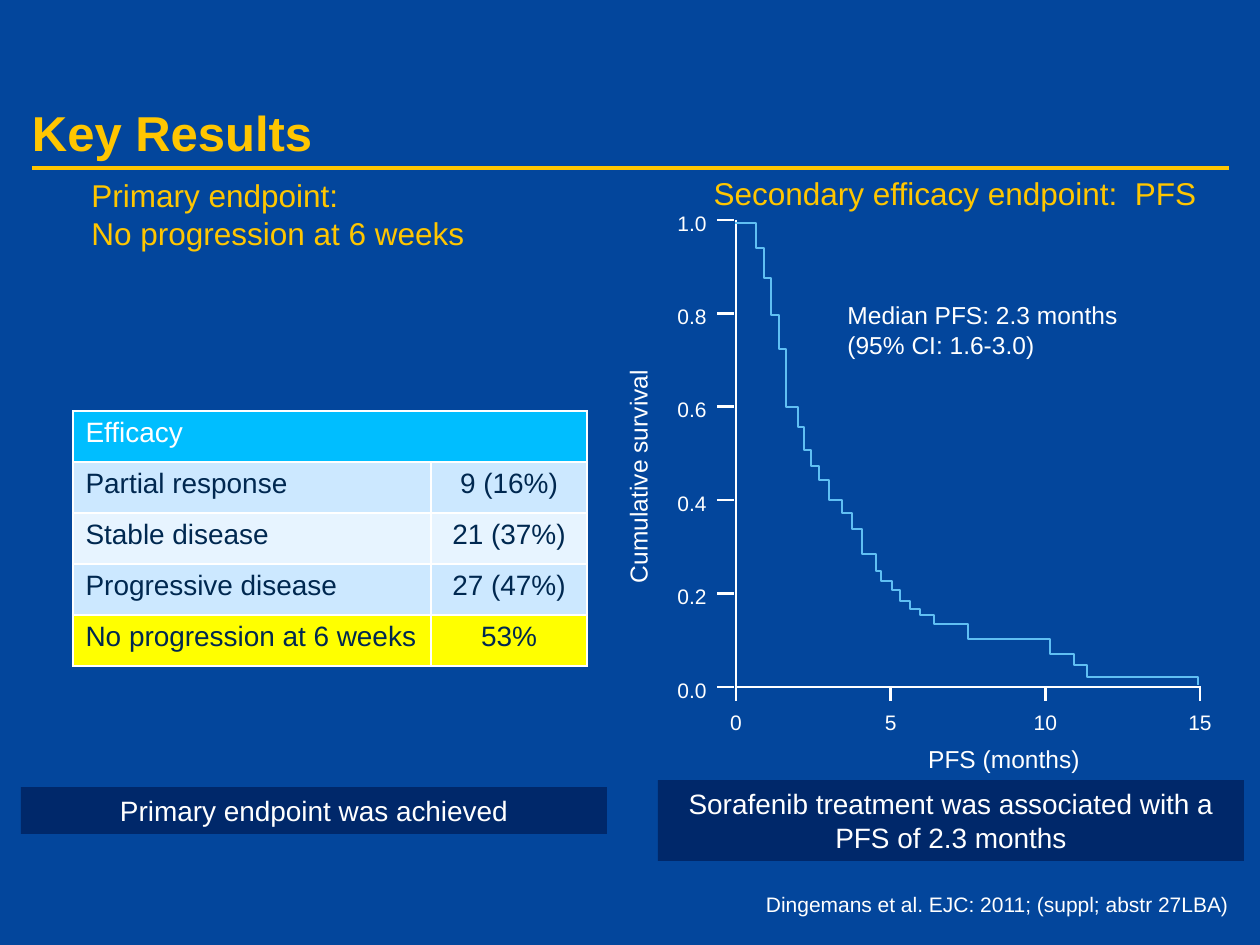
from lxml.etree import SubElement
from pptx import Presentation
from pptx.dml.color import RGBColor
from pptx.enum.shapes import MSO_CONNECTOR, MSO_SHAPE
from pptx.enum.text import MSO_ANCHOR, PP_ALIGN
from pptx.oxml.ns import qn
from pptx.util import Emu, Pt

BLUE = RGBColor(0x03, 0x46, 0x9C)
NAVY = RGBColor(0x00, 0x28, 0x6A)
INK = RGBColor(0x00, 0x28, 0x50)
GOLD = RGBColor(0xFF, 0xC6, 0x00)
WHITE = RGBColor(0xFF, 0xFF, 0xFF)
CYAN = RGBColor(0x00, 0xBE, 0xFF)
PALE = RGBColor(0xCC, 0xE8, 0xFF)
PALER = RGBColor(0xE7, 0xF4, 0xFF)
YELLOW = RGBColor(0xFF, 0xFF, 0x00)
CURVE_BLUE = RGBColor(0x60, 0xBF, 0xF3)
EMU_PER_PX = 914400 / 126

TITLE = "Key Results"
CITATION = "Dingemans et al. EJC: 2011; (suppl; abstr 27LBA)"
PRIMARY = "Primary endpoint:\nNo progression at 6 weeks"
SECONDARY = "Secondary efficacy endpoint:  PFS"
MEDIAN = ("Median PFS: 2.3 months", "(95% CI: 1.6-3.0)")
EFFICACY = [
    ("Efficacy", "", CYAN, WHITE),
    ("Partial response", "9 (16%)", PALE, INK),
    ("Stable disease", "21 (37%)", PALER, INK),
    ("Progressive disease", "27 (47%)", PALE, INK),
    ("No progression at 6 weeks", "53%", YELLOW, INK),
]
CONCLUSIONS = [
    ("Primary endpoint was achieved", (21, 787, 586, 47)),
    ("Sorafenib treatment was associated with a PFS of 2.3 months", (658, 780, 586, 81)),
]
SURVIVAL_LABELS = ["0.0", "0.2", "0.4", "0.6", "0.8", "1.0"]
MONTH_LABELS = ["0", "5", "10", "15"]

# Plot edges, and the survival curve as (x of drop, y after drop), all in px
LEFT, TOP, RIGHT, BOTTOM = 736, 220, 1200, 687
CURVE_START = (735, 223)
DROPS = [
    (756, 248), (764, 278), (771, 315), (779, 349), (786, 407), (798, 427),
    (804, 450), (811, 466), (819, 480), (829, 500), (842, 513), (852, 529),
    (862, 554), (876, 571), (881, 581), (892, 590), (900, 601), (910, 609),
    (920, 615), (934, 624), (968, 639), (1050, 654), (1074, 665), (1087, 677),
    (1198, 685),
]


def px(value):
    return Emu(round(value * EMU_PER_PX))


def write(frame, *lines, size, color=WHITE, align=PP_ALIGN.LEFT, bold=False, before=0):
    for index, line in enumerate(lines):
        paragraph = frame.paragraphs[0] if index == 0 else frame.add_paragraph()
        paragraph.text = line
        paragraph.alignment = align
        paragraph.space_before = Pt(before)
        for run in paragraph.runs:
            run.font.name = "Arial"
            run.font.size = Pt(size)
            run.font.bold = bold
            run.font.color.rgb = color


def add_text(slide, box, *lines, wrap=False, rotation=0, **text_format):
    shape = slide.shapes.add_textbox(*map(px, box))
    shape.rotation = rotation
    shape.text_frame.word_wrap = wrap
    write(shape.text_frame, *lines, **text_format)
    return shape


def remove_insets(frame, top=0):
    frame.margin_left = frame.margin_right = frame.margin_bottom = 0
    frame.margin_top = px(top)
    frame.vertical_anchor = MSO_ANCHOR.BOTTOM


def add_line(slide, x1, y1, x2, y2, color=WHITE, width=1.5):
    line = slide.shapes.add_connector(MSO_CONNECTOR.STRAIGHT, *map(px, (x1, y1, x2, y2)))
    line.line.color.rgb = color
    line.line.width = Pt(width)
    SubElement(line._element.spPr, qn("a:effectLst"))


def add_outline(slide, points, color):
    builder = slide.shapes.build_freeform(*points[0], scale=EMU_PER_PX)
    builder.add_line_segments(points[1:], close=False)
    shape = builder.convert_to_shape()
    shape.shadow.inherit = False
    shape.fill.background()
    shape.line.color.rgb = color
    shape.line.width = Pt(1.5)


def add_cell_borders(cell):
    properties = cell._tc.get_or_add_tcPr()
    for side in ("lnL", "lnR", "lnT", "lnB"):
        border = SubElement(properties, qn(f"a:{side}"), w=str(Pt(1)))
        fill = SubElement(border, qn("a:solidFill"))
        SubElement(fill, qn("a:srgbClr"), val=str(WHITE))


def add_efficacy_table(slide):
    frame = slide.shapes.add_table(len(EFFICACY), 2, px(73), px(411), px(514), px(255))
    table = frame.table
    table.columns[0].width, table.columns[1].width = px(358), px(156)
    for row, (outcome, patients, fill, color) in enumerate(EFFICACY):
        table.rows[row].height = px(51)
        for column, (text, align) in enumerate(
            [(outcome, PP_ALIGN.LEFT), (patients, PP_ALIGN.CENTER)]
        ):
            cell = table.cell(row, column)
            add_cell_borders(cell)
            cell.fill.solid()
            cell.fill.fore_color.rgb = fill
            write(cell.text_frame, text, size=16, color=color, align=align)
    table.cell(0, 0).merge(table.cell(0, 1))


def add_survival_plot(slide):
    add_outline(slide, [(LEFT, TOP), (LEFT, BOTTOM), (RIGHT, BOTTOM)], WHITE)
    for index, label in enumerate(SURVIVAL_LABELS):
        y = BOTTOM - index * (BOTTOM - TOP) / (len(SURVIVAL_LABELS) - 1)
        add_line(slide, 717, y, 734, y)
        add_text(slide, (664, y - 16, 55, 33), label, size=12, align=PP_ALIGN.RIGHT)
    for index, label in enumerate(MONTH_LABELS):
        x = LEFT + index * (RIGHT - LEFT) / (len(MONTH_LABELS) - 1)
        add_line(slide, x, 686, x, 701)
        add_text(slide, (x - 25, 703, 50, 38), label, size=12, align=PP_ALIGN.CENTER)

    points = [CURVE_START]
    for x, y in DROPS:
        points += [(x, points[-1][1]), (x, y)]
    add_outline(slide, points, CURVE_BLUE)

    add_text(slide, (915, 738, 178, 43), "PFS (months)", size=14, align=PP_ALIGN.CENTER)
    add_text(slide, (519, 455, 239, 43), "Cumulative survival", size=14,
             align=PP_ALIGN.CENTER, rotation=270)
    add_text(slide, (835, 294, 297, 72), *MEDIAN, size=14)


def main():
    presentation = Presentation()
    presentation.slide_width, presentation.slide_height = px(1260), px(945)
    slide = presentation.slides.add_slide(presentation.slide_layouts[5])
    slide.background.fill.solid()
    slide.background.fill.fore_color.rgb = BLUE

    title = slide.shapes.title
    title.left, title.top, title.width, title.height = map(px, (32, 32, 1197, 129))
    remove_insets(title.text_frame, top=6)
    write(title.text_frame, TITLE, size=28, color=GOLD, bold=True)
    add_line(slide, 32, 168, 1229, 168, color=GOLD, width=2.25)

    citation = add_text(slide, (763, 892, 466, 25), CITATION, size=12, align=PP_ALIGN.RIGHT)
    remove_insets(citation.text_frame)
    add_text(slide, (79, 170, 402, 90), PRIMARY, size=18, color=GOLD, before=4)
    add_text(slide, (640, 168, 630, 50), SECONDARY, size=18, color=GOLD,
             align=PP_ALIGN.CENTER, wrap=True)
    add_efficacy_table(slide)
    add_survival_plot(slide)

    for text, box in CONCLUSIONS:
        banner = slide.shapes.add_shape(MSO_SHAPE.RECTANGLE, *map(px, box))
        banner.shadow.inherit = False
        banner.fill.solid()
        banner.fill.fore_color.rgb = NAVY
        banner.line.fill.background()
        banner.text_frame.word_wrap = True
        write(banner.text_frame, text, size=16, align=PP_ALIGN.CENTER)

    presentation.save("out.pptx")


if __name__ == "__main__":
    main()
